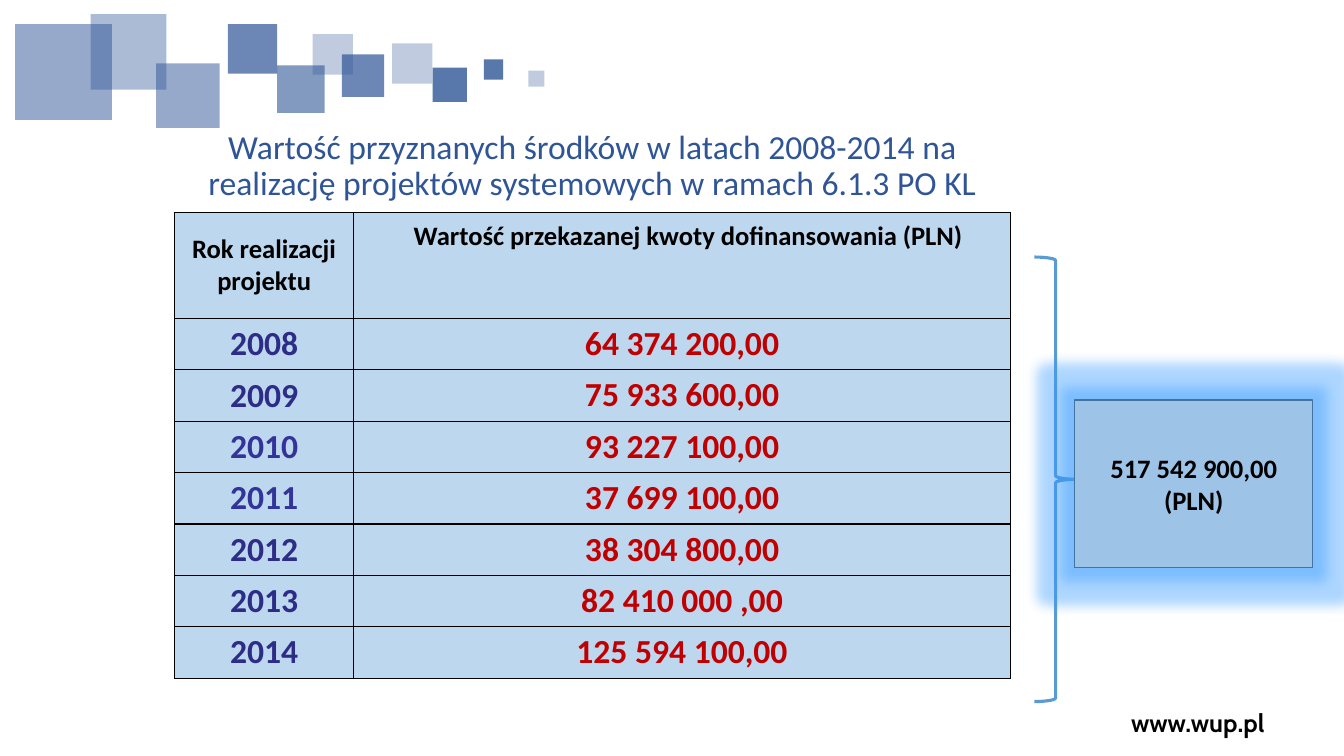
from lxml import etree
from pptx import Presentation
from pptx.dml.color import RGBColor
from pptx.enum import shapes, text
from pptx.oxml import ns
from pptx.util import Inches, Pt

NAVY = "2F5597"
SQUARES = [
    (3.89, 0.43, 0.4, 0.4, 30),
    (4.29, 0.67, 0.34, 0.34, 80),
    (3.39, 0.54, 0.42, 0.42, 70),
    (0.15, 0.24, 0.96, 0.95, 50),
    (2.75, 0.65, 0.47, 0.47, 60),
    (1.55, 0.63, 0.63, 0.64, 50),
    (0.9, 0.14, 0.75, 0.75, 40),
    (4.8, 0.59, 0.19, 0.2, 80),
    (2.26, 0.24, 0.49, 0.49, 70),
    (3.1, 0.34, 0.4, 0.4, 30),
    (5.24, 0.7, 0.16, 0.16, 30),
]
HEADERS = ["Rok realizacji projektu", "Wartość przekazanej kwoty dofinansowania (PLN)"]
GRANTS = [
    ("2008", "64 374 200,00", "2D2D87"),
    ("2009", "75 933 600,00", "2D2D87"),
    ("2010", "93 227 100,00", "333399"),
    ("2011", "37 699 100,00", "333399"),
    ("2012", "38 304 800,00", "2D2D87"),
    ("2013", "82 410 000 ,00", "2D2D87"),
    ("2014", "125 594 100,00", "2D2D87"),
]


def rgb(value):
    return RGBColor.from_string(value)


def add_element(parent, tag, **attributes):
    return etree.SubElement(parent, ns.qn(tag), attributes)


def set_fill(target, color):
    target.fill.solid()
    target.fill.fore_color.rgb = rgb(color)


def set_margins(target, horizontal, vertical):
    target.margin_left = target.margin_right = Inches(horizontal)
    target.margin_top = target.margin_bottom = Inches(vertical)


def write(frame, content, size, color, bold=True, font="Calibri"):
    paragraph = frame.paragraphs[0]
    paragraph.alignment = text.PP_ALIGN.CENTER
    run = paragraph.add_run()
    run.text = content
    run.font.name = font
    run.font.size = Pt(size)
    run.font.bold = bold
    run.font.color.rgb = rgb(color)
    return paragraph


def add_preset(parent, kind, box, fill=None, line=None, width=1):
    shape = parent.add_shape(kind, *map(Inches, box))
    shape.shadow.inherit = False
    if fill:
        set_fill(shape, fill)
    else:
        shape.fill.background()
    if line:
        shape.line.color.rgb = rgb(line)
        shape.line.width = Pt(width)
    else:
        shape.line.fill.background()
    return shape


def add_squares(slide):
    group = slide.shapes.add_group_shape()
    for *box, opacity in SQUARES:
        square = add_preset(group.shapes, shapes.MSO_SHAPE.RECTANGLE, box, NAVY)
        color = square.fill._xPr.find(".//" + ns.qn("a:srgbClr"))
        add_element(color, "a:alpha", val=str(opacity * 1000))


def add_address(slide):
    box = slide.shapes.add_textbox(Inches(10.38), Inches(6.97), Inches(3), Inches(0.4))
    box.text_frame.word_wrap = True
    box.text_frame.vertical_anchor = text.MSO_ANCHOR.MIDDLE
    write(box.text_frame, "www.wup.pl", 18, "000000", font="Cabin")


def format_title(slide):
    title = slide.shapes.title
    title.left, title.top = Inches(1.72), Inches(0.91)
    title.width, title.height = Inches(8.31), Inches(1.19)
    frame = title.text_frame
    frame.word_wrap = True
    frame.auto_size = text.MSO_AUTO_SIZE.NONE
    frame.vertical_anchor = text.MSO_ANCHOR.BOTTOM
    set_margins(frame, 0.13, 0.09)
    content = ("Wartość przyznanych środków w latach 2008-2014 na "
               "realizację projektów systemowych w ramach 6.1.3 PO KL")
    write(frame, content, 24, NAVY, bold=False).line_spacing = 0.9


def format_cell(cell, content, size, color, anchor):
    set_margins(cell, 0.13, 0.05)
    cell.vertical_anchor = anchor
    write(cell.text_frame, content, size, color)
    properties = cell._tc.get_or_add_tcPr()
    for side in ("a:lnL", "a:lnR", "a:lnT", "a:lnB"):
        border = add_element(properties, side, w=str(Pt(1)))
        add_element(add_element(border, "a:solidFill"), "a:srgbClr", val="000000")
    set_fill(cell, "BDD7EE")


def add_grants_table(slide):
    frame = slide.shapes.add_table(len(GRANTS) + 1, 2, Inches(1.73), Inches(2.11),
                                   Inches(8.29), Inches(4.62))
    table = frame.table
    table.first_row = table.horz_banding = False
    for column, width in zip(table.columns, (1.78, 6.51)):
        column.width = Inches(width)
    rows = [[(HEADERS[0], 19, "000000"), (HEADERS[1], 19, "000000")]]
    rows += [[(year, 24, color), (amount, 24, "C00000")] for year, amount, color in GRANTS]
    anchors = (text.MSO_ANCHOR.MIDDLE, text.MSO_ANCHOR.TOP)
    for index, row in enumerate(rows):
        table.rows[index].height = Inches(0.51 if index else 1.05)
        for column, (content, size, color) in enumerate(row):
            format_cell(table.cell(index, column), content, size, color, anchors[column])
    amount_header = table.cell(0, 1)
    amount_header.margin_left = Inches(0.25)
    amount_header.margin_top = Inches(0.08)


def add_total(slide):
    add_preset(slide.shapes, shapes.MSO_SHAPE.RIGHT_BRACE, (10.26, 2.55, 0.42, 4.41),
               line="5B9BD5", width=2.25)
    total = add_preset(slide.shapes, shapes.MSO_SHAPE.RECTANGLE, (10.66, 3.97, 2.36, 1.66),
                       "9DC3E6", "43739E")
    effects = total._element.spPr.find(ns.qn("a:effectLst"))
    glow = add_element(effects, "a:glow", rad=str(Pt(18)))
    color = add_element(glow, "a:srgbClr", val="3399FF")
    add_element(color, "a:alpha", val="40000")
    frame = total.text_frame
    frame.word_wrap = True
    frame.vertical_anchor = text.MSO_ANCHOR.MIDDLE
    set_margins(frame, 0.13, 0.07)
    write(frame, "517 542 900,00 (PLN)", 19, "000000")


def main():
    presentation = Presentation()
    presentation.slide_width = Inches(13.33)
    presentation.slide_height = Inches(7.5)
    slide = presentation.slides.add_slide(presentation.slide_layouts[5])
    add_address(slide)
    add_squares(slide)
    format_title(slide)
    add_grants_table(slide)
    add_total(slide)
    presentation.save("out.pptx")


if __name__ == "__main__":
    main()
